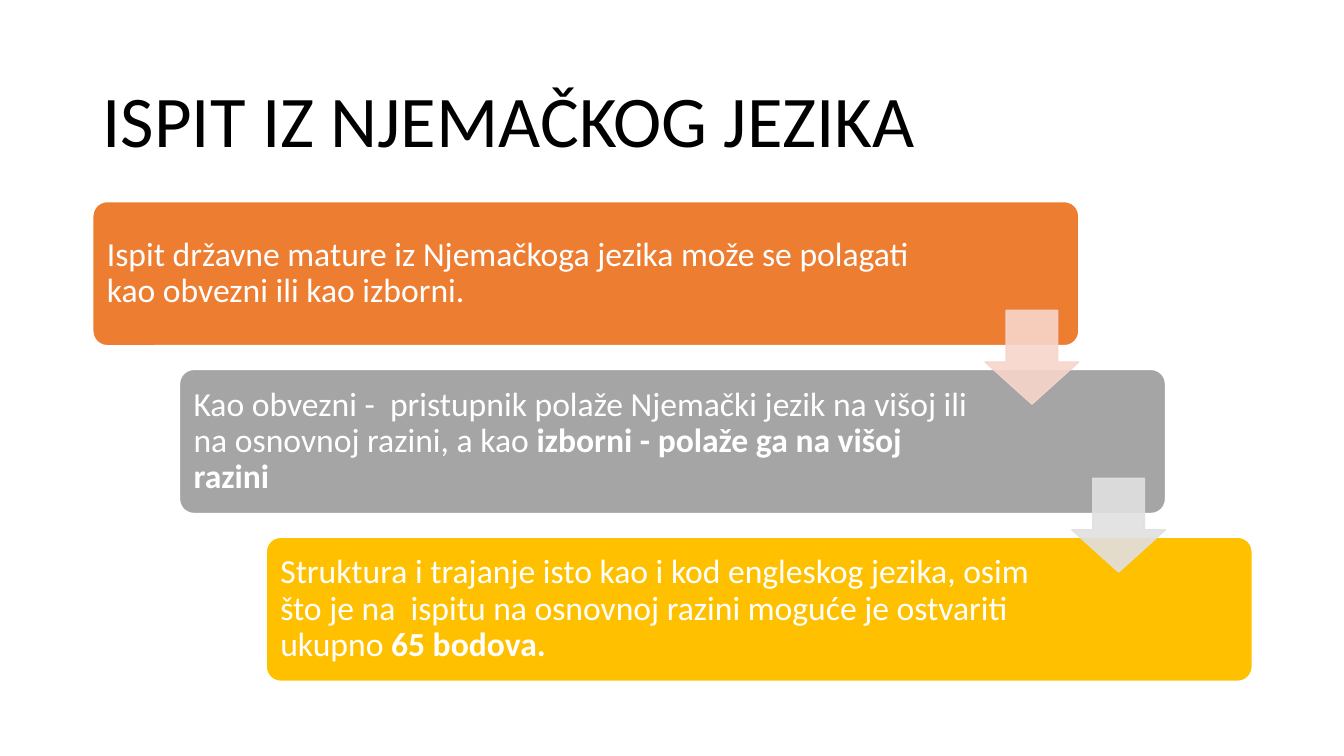
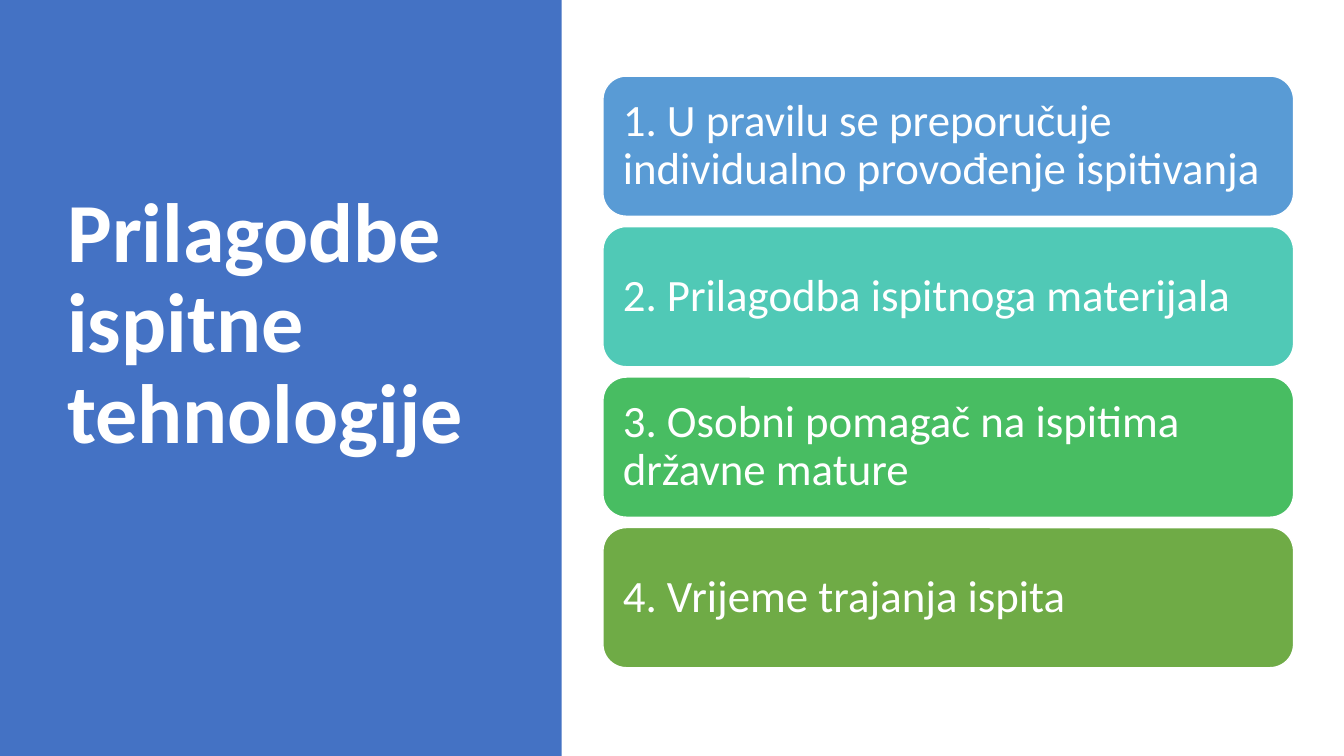
from lxml import etree
from pptx import Presentation
from pptx.dml.color import RGBColor
from pptx.enum.shapes import MSO_SHAPE as SHAPE
from pptx.enum.text import MSO_ANCHOR as ANCHOR, PP_ALIGN as ALIGN
from pptx.oxml.ns import qn
from pptx.util import Inches, Pt

FONT = "Calibri"
WHITE = RGBColor(0xFF, 0xFF, 0xFF)
BLACK = RGBColor(0x00, 0x00, 0x00)
BLUE = RGBColor(0x44, 0x72, 0xC4)
ORANGE = RGBColor(0xED, 0x7D, 0x31)
GRAY = RGBColor(0xA5, 0xA5, 0xA5)
GOLD = RGBColor(0xFF, 0xC0, 0x00)
PEACH = RGBColor(0xF7, 0xD5, 0xCB)
SILVER = RGBColor(0xE0, 0xE0, 0xE0)
SKY = RGBColor(0x59, 0x9B, 0xD5)
TEAL = RGBColor(0x50, 0xC9, 0xB6)
GREEN = RGBColor(0x48, 0xBD, 0x62)
OLIVE = RGBColor(0x6F, 0xAB, 0x46)


def add_shape(slide, kind, at, fill, line=None, adj=()):
    sp = slide.shapes.add_shape(kind, *[Inches(v) for v in at])
    sp.shadow.inherit = False
    sp.fill.solid()
    sp.fill.fore_color.rgb = fill
    if line is None:
        sp.line.fill.background()
    else:
        sp.line.color.rgb = line
        sp.line.width = Pt(1)
    for i, value in enumerate(adj):
        sp.adjustments[i] = value
    return sp


def write(sp, runs, size, color, margins):
    """Fill a shape with one left-aligned paragraph of (text, bold) runs."""
    tf = sp.text_frame
    tf.word_wrap = True
    tf.vertical_anchor = ANCHOR.MIDDLE
    (tf.margin_left, tf.margin_top,
     tf.margin_right, tf.margin_bottom) = [Inches(m) for m in margins]
    p = tf.paragraphs[0]
    p.alignment = ALIGN.LEFT
    p.line_spacing = 0.9
    for text, bold in runs:
        r = p.add_run()
        r.text = text
        r.font.name, r.font.size, r.font.bold = FONT, Pt(size), bold
        r.font.color.rgb = color


prs = Presentation()
prs.slide_width, prs.slide_height = Inches(13.33), Inches(7.5)
blank = prs.slide_layouts[6]
TITLE_MARGINS = (0.1, 0.05, 0.1, 0.05)

# Slide 1: title above a staircase of three steps
s = prs.slides.add_slide(blank)
title = s.shapes.add_textbox(*[Inches(v) for v in (0.92, 0.61, 11.5, 1.24)])
write(title, [("ISPIT IZ NJEMAČKOG JEZIKA", False)], 52, BLACK, TITLE_MARGINS)

LEFT, TOP, STEP_W, STEP_H = 0.92, 2, 9.78, 1.43
SHIFT_X, SHIFT_Y = 0.86, 1.665
ARROW = 0.93
steps = [
    (ORANGE, 1.57, [
        ("Ispit državne mature iz Njemačkoga jezika može se polagati kao "
         "obvezni ili kao izborni.", False)]),
    (GRAY, 1.9, [
        ("Kao obvezni -  pristupnik polaže Njemački jezik na višoj ili na "
         "osnovnoj razini, a kao ", False),
        ("izborni - polaže ga na višoj razini", True)]),
    (GOLD, 1.9, [
        ("Struktura i trajanje isto kao i kod engleskog jezika, osim što je "
         "na  ispitu na osnovnoj razini moguće je ostvariti ukupno ", False),
        ("65 bodova.", True)]),
]
for i, (fill, right, runs) in enumerate(steps):
    at = (LEFT + i * SHIFT_X, TOP + i * SHIFT_Y, STEP_W, STEP_H)
    sp = add_shape(s, SHAPE.ROUNDED_RECTANGLE, at, fill, WHITE, [0.1])
    write(sp, runs, 24, WHITE, (0.1, 0.1, right, 0.1))

# Translucent arrows from each step to the next
for i, color in enumerate([PEACH, SILVER]):
    at = (LEFT + STEP_W - ARROW + i * SHIFT_X, TOP + 1.08 + i * SHIFT_Y,
          ARROW, ARROW)
    sp = add_shape(s, SHAPE.DOWN_ARROW, at, color, color, [0.55, 0.45])
    # Adjustment order in the preset is head length, then shaft width
    sp.adjustments[0], sp.adjustments[1] = 0.55, 0.45
    for clr in sp._element.spPr.iter(qn("a:srgbClr")):
        etree.SubElement(clr, qn("a:alpha")).set("val", "90000")

# Slide 2: title panel beside four stacked cards
s = prs.slides.add_slide(blank)
add_shape(s, SHAPE.RECTANGLE, (0, 0, 5.57, 7.5), BLUE)
title = s.shapes.add_textbox(*[Inches(v) for v in (0.57, 0.68, 4.16, 5.1)])
write(title, [("Prilagodbe ispitne tehnologije", True)], 60, WHITE,
      TITLE_MARGINS)

CARD_TOP, CARD_H, CARD_PITCH = 0.755, 1.39, 1.493
cards = [
    (SKY, "1. U pravilu se preporučuje individualno provođenje ispitivanja"),
    (TEAL, "2. Prilagodba ispitnoga materijala"),
    (GREEN, "3. Osobni pomagač na ispitima državne mature"),
    (OLIVE, "4. Vrijeme trajanja ispita"),
]
for i, (fill, text) in enumerate(cards):
    at = (5.98, CARD_TOP + i * CARD_PITCH, 6.85, CARD_H)
    sp = add_shape(s, SHAPE.ROUNDED_RECTANGLE, at, fill, WHITE, [0.167])
    write(sp, [(text, False)], 32, WHITE, (0.13,) * 4)

prs.save("out.pptx")
